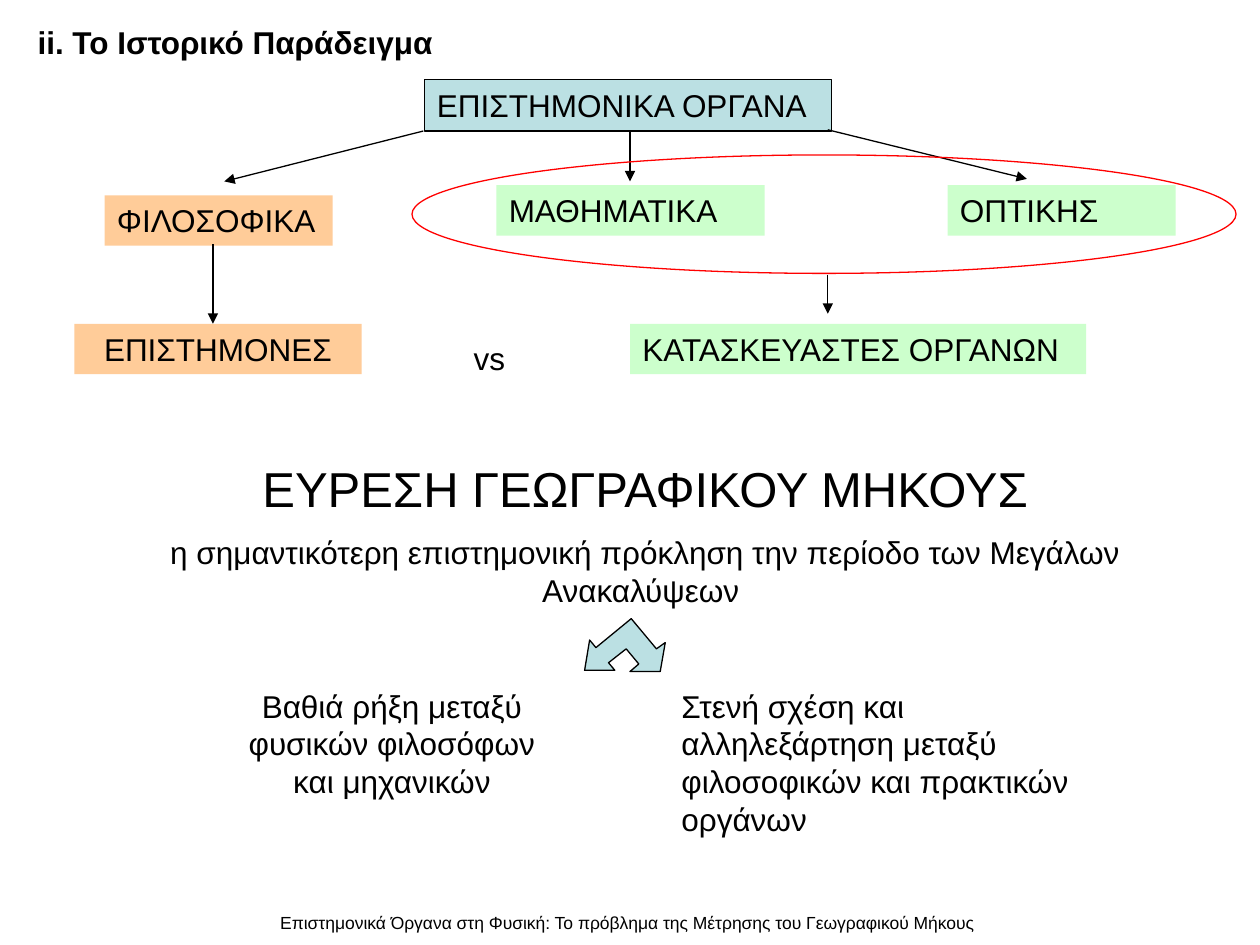
from dataclasses import dataclass

from lxml.etree import SubElement
from pptx import Presentation
from pptx.dml.color import RGBColor
from pptx.enum.shapes import MSO_CONNECTOR, MSO_SHAPE
from pptx.enum.text import MSO_ANCHOR, PP_ALIGN
from pptx.oxml.ns import qn
from pptx.util import Inches, Pt


@dataclass(frozen=True)
class Theme:
    font: str = "Arial"
    ink: RGBColor = RGBColor(0x00, 0x00, 0x00)
    blue: RGBColor = RGBColor(0xBB, 0xE0, 0xE3)
    orange: RGBColor = RGBColor(0xFF, 0xCC, 0x99)
    green: RGBColor = RGBColor(0xCC, 0xFF, 0xCC)
    red: RGBColor = RGBColor(0xFF, 0x00, 0x00)
    small: Pt = Pt(10)
    body: Pt = Pt(18)
    large: Pt = Pt(28)
    gap: Pt = Pt(9)
    rule: Pt = Pt(0.75)


THEME = Theme()
LEFT, CENTER = PP_ALIGN.LEFT, PP_ALIGN.CENTER


def apply(target, values):
    for name, value in values.items():
        setattr(target, name, value)


def place(box, x, y, width, height):
    """Turn a position inside a region into slide lengths."""
    return [Inches(v) for v in (box[0] + x, box[1] + y, width, height)]


def write(shape, lines, align=LEFT, bold=False):
    """Fill a shape with (text, size) lines."""
    frame = shape.text_frame
    apply(frame, {"word_wrap": True, "vertical_anchor": MSO_ANCHOR.TOP})
    for index, (text, size) in enumerate(lines):
        paragraph = frame.paragraphs[0] if index == 0 else frame.add_paragraph()
        paragraph.alignment = align
        if index:
            paragraph.space_before = THEME.gap
        run = paragraph.add_run()
        run.text = text
        apply(run.font, {"name": THEME.font, "size": size, "bold": bold})
        run.font.color.rgb = THEME.ink


def add_text(slide, box, at, lines, **style):
    write(slide.shapes.add_textbox(*place(box, *at)), lines, **style)


def paint(shape, fill=None, outline=None):
    shape.shadow.inherit = False
    if fill is None:
        shape.fill.background()
    else:
        shape.fill.solid()
        shape.fill.fore_color.rgb = fill
    if outline is None:
        shape.line.fill.background()
    else:
        shape.line.color.rgb = outline
        shape.line.width = THEME.rule


def add_label(slide, box, at, text, fill, align=LEFT, outline=None):
    label = slide.shapes.add_shape(MSO_SHAPE.RECTANGLE, *place(box, *at))
    paint(label, fill, outline)
    write(label, [(text, THEME.body)], align)


def add_arrow(slide, box, start, end):
    arrow = slide.shapes.add_connector(
        MSO_CONNECTOR.STRAIGHT, *place(box, *start, 0, 0)[:2], *place(box, *end, 0, 0)[:2])
    arrow.line.color.rgb = THEME.ink
    arrow.line.width = THEME.rule
    SubElement(arrow.line._get_or_add_ln(), qn("a:tailEnd"), type="triangle")
    SubElement(arrow._element.spPr, qn("a:effectLst"))


def add_title(slide, box):
    add_text(slide, box, (0, 0, 3.7, 0.4),
             [("ii. Το Ιστορικό Παράδειγμα", THEME.body)], bold=True)


def add_instrument_tree(slide, box):
    # Root and its three branches
    add_label(slide, box, (2.78, 0, 3.23, 0.41), "ΕΠΙΣΤΗΜΟΝΙΚΑ ΟΡΓΑΝΑ",
              THEME.blue, outline=THEME.ink)
    for start, end in (((2.77, 0.41), (1.19, 0.81)),
                       ((4.41, 0.41), (4.41, 0.81)),
                       ((5.98, 0.4), (7.56, 0.79))):
        add_arrow(slide, box, start, end)

    # Kinds of instruments
    for x, y, width, text, fill in (
            (0.24, 0.92, 1.81, "ΦΙΛΟΣΟΦΙΚΑ", THEME.orange),
            (3.35, 0.84, 2.13, "ΜΑΘΗΜΑΤΙΚΑ", THEME.green),
            (6.93, 0.84, 1.81, "ΟΠΤΙΚΗΣ", THEME.green)):
        add_label(slide, box, (x, y, width, 0.4), text, fill)
    practical_ring = slide.shapes.add_shape(
        MSO_SHAPE.OVAL, *place(box, 2.68, 0.6, 6.54, 0.94))
    paint(practical_ring, outline=THEME.red)

    # People behind the instruments
    add_arrow(slide, box, (1.1, 1.31), (1.1, 1.94))
    add_arrow(slide, box, (5.98, 1.55), (5.98, 1.86))
    add_label(slide, box, (0, 1.94, 2.28, 0.4), "ΕΠΙΣΤΗΜΟΝΕΣ", THEME.orange, CENTER)
    add_label(slide, box, (4.41, 1.94, 3.62, 0.4), "ΚΑΤΑΣΚΕΥΑΣΤΕΣ ΟΡΓΑΝΩΝ", THEME.green)
    add_text(slide, box, (3.07, 2.01, 0.55, 0.4), [("vs", THEME.body)])


def add_longitude_challenge(slide, box):
    # Challenge
    add_text(slide, box, (0, 0, 8.9, 1.32), [
        ("ΕΥΡΕΣΗ ΓΕΩΓΡΑΦΙΚΟΥ ΜΗΚΟΥΣ", THEME.large),
        ("η σημαντικότερη επιστημονική πρόκληση την περίοδο των Μεγάλων Ανακαλύψεων ",
         THEME.body)], align=CENTER)

    # Two consequences
    add_text(slide, box, (1.18, 1.81, 2.52, 1),
             [("Βαθιά ρήξη μεταξύ φυσικών φιλοσόφων και μηχανικών", THEME.body)],
             align=CENTER)
    add_text(slide, box, (4.64, 1.81, 3.54, 1.3),
             [("Στενή σχέση και αλληλεξάρτηση μεταξύ φιλοσοφικών και πρακτικών οργάνων",
               THEME.body)])

    # Two-headed bent arrow
    outline = [(3.97, 1.73), (4.21, 1.73), (4.16, 1.67), (4.3, 1.56),
               (4.4, 1.68), (4.33, 1.74), (4.57, 1.74), (4.61, 1.51),
               (4.54, 1.56), (4.34, 1.32), (4.06, 1.55), (4.01, 1.49)]
    points = [place(box, x, y, 0, 0)[:2] for x, y in outline]
    builder = slide.shapes.build_freeform(*points[0])
    builder.add_line_segments(points[1:], close=True)
    paint(builder.convert_to_shape(), THEME.blue, THEME.ink)


def add_footer(slide, box):
    add_text(slide, box, (0, 0, 9.29, 0.29), [
        ("Επιστημονικά Όργανα στη Φυσική: Το πρόβλημα της Μέτρησης του Γεωγραφικού Μήκους ",
         THEME.small)], align=CENTER)


def main():
    deck = Presentation()
    apply(deck, {"slide_width": Inches(10), "slide_height": Inches(7.5)})
    slide = deck.slides.add_slide(deck.slide_layouts[6])
    add_footer(slide, (0.35, 7.19))
    add_title(slide, (0.2, 0.13))
    add_instrument_tree(slide, (0.59, 0.63))
    add_longitude_challenge(slide, (0.67, 3.59))
    deck.save("out.pptx")


if __name__ == "__main__":
    main()
